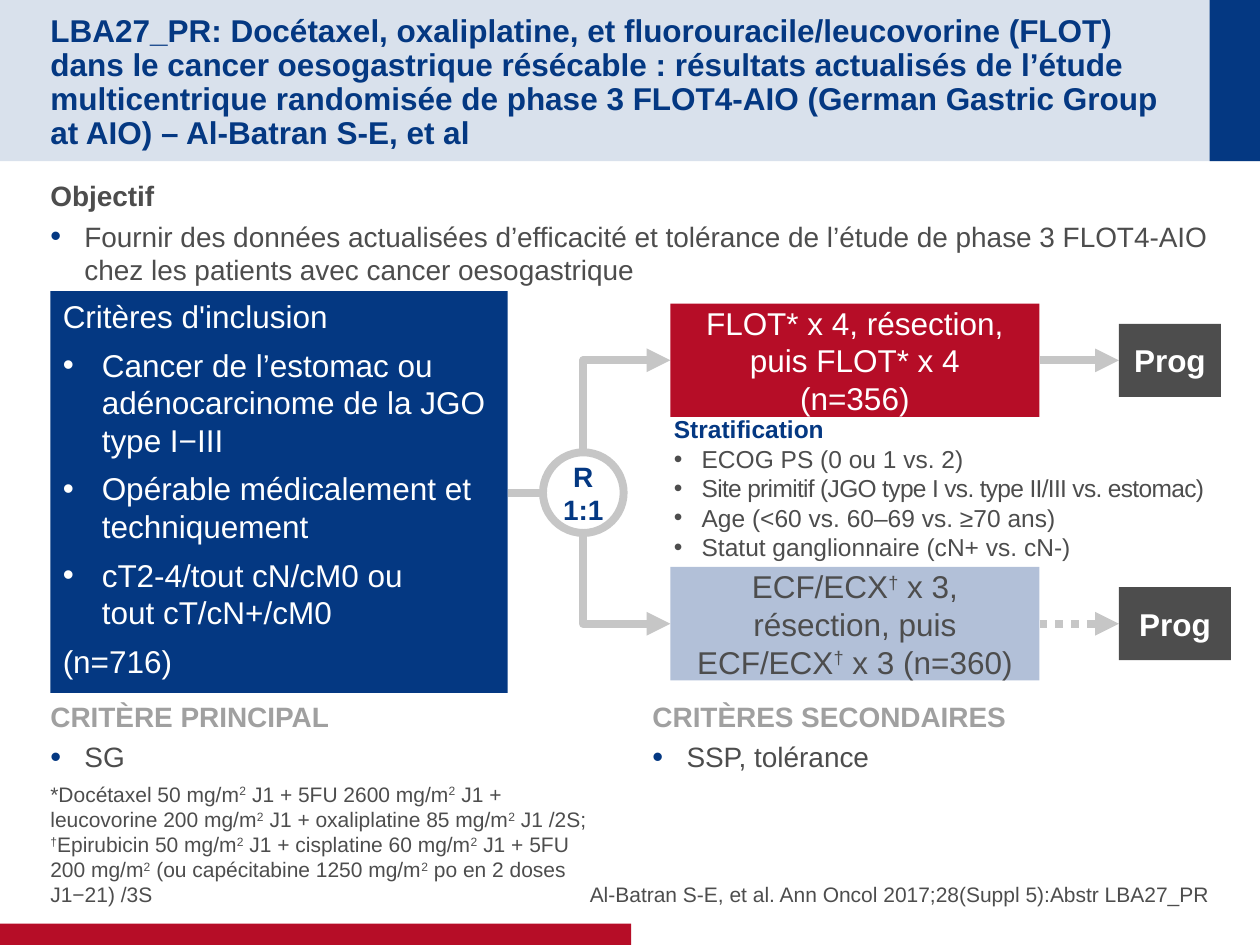
from dataclasses import dataclass

from lxml import etree
from pptx import Presentation
from pptx.dml.color import RGBColor
from pptx.enum.dml import MSO_LINE
from pptx.enum.shapes import MSO_CONNECTOR, MSO_SHAPE
from pptx.enum.text import MSO_ANCHOR, PP_ALIGN
from pptx.oxml.ns import qn
from pptx.util import Inches, Pt

RECT, OVAL = MSO_SHAPE.RECTANGLE, MSO_SHAPE.OVAL
STRAIGHT, ELBOW = MSO_CONNECTOR.STRAIGHT, MSO_CONNECTOR.ELBOW
LEFT, CENTER, RIGHT = PP_ALIGN.LEFT, PP_ALIGN.CENTER, PP_ALIGN.RIGHT
TOP, MIDDLE, BOTTOM = MSO_ANCHOR.TOP, MSO_ANCHOR.MIDDLE, MSO_ANCHOR.BOTTOM
DOTTED = MSO_LINE.ROUND_DOT

COLORS = {
    "navy": "043882", "red": "B60D27", "pale": "B2C0D8", "text": "4D4D4D",
    "heading": "A0A0A0", "arrow": "C6C6C6", "white": "FFFFFF",
}
FONT = "Arial"

# The slide is a grid of 100 columns by 75 rows
COLUMNS, ROWS, CELL = 100, 75, 0.1
MARGIN = 4
R_COLUMN, R_ROW, R_RADIUS = 46.3, 39.1, 3.2
ARM_LEFT, ARM_WIDTH, ARM_HEIGHT = 53.2, 29.3, 9
ARM_RIGHT = ARM_LEFT + ARM_WIDTH
PROG_LEFT, PROG_HEIGHT = 88.8, 5.8
TOP_ARM, BOTTOM_ARM = 28.6, 49.5
CRITERIA_WIDTH = 36.3


@dataclass(frozen=True)
class Area:
    left: float
    top: float
    width: float
    height: float

    def lengths(self) -> tuple:
        return tuple(grid(n) for n in (self.left, self.top, self.width, self.height))


@dataclass(frozen=True)
class Line:
    """One paragraph; text between ^ marks is superscript."""
    text: str
    size: int = 16
    color: str = "text"
    bold: bool = False
    indent: float = 0  # in columns; a positive indent carries a bullet
    bullet_color: str = ""
    after: float = 0
    spacing: float = 1
    tracking: int = 0


def grid(cells: float) -> int:
    return Inches(cells * CELL)


def rgb(name: str) -> RGBColor:
    return RGBColor.from_string(COLORS[name])


def add_bullet(para, line: Line) -> None:
    properties = para._p.get_or_add_pPr()
    properties.set("marL", str(grid(line.indent)))
    properties.set("indent", str(-grid(line.indent)))
    if line.bullet_color:
        color = etree.SubElement(properties, qn("a:buClr"))
        etree.SubElement(color, qn("a:srgbClr"), val=COLORS[line.bullet_color])
        etree.SubElement(properties, qn("a:buSzPct"), val="110000")
    etree.SubElement(properties, qn("a:buFont"), typeface=FONT)
    etree.SubElement(properties, qn("a:buChar"), char="•")


def write(box, lines: list[Line], align=LEFT, anchor=TOP, insets=(0.1, 0.05, 0.1, 0.05), wrap=True) -> None:
    frame = box.text_frame
    frame.word_wrap, frame.vertical_anchor = wrap, anchor
    (frame.margin_left, frame.margin_top,
     frame.margin_right, frame.margin_bottom) = map(Inches, insets)
    for number, line in enumerate(lines):
        para = frame.add_paragraph() if number else frame.paragraphs[0]
        para.alignment, para.line_spacing = align, line.spacing
        para.space_after = Pt(line.after)
        if line.indent:
            add_bullet(para, line)
        for position, part in enumerate(line.text.split("^")):
            for piece_number, piece in enumerate(part.split("\n")):
                if piece_number:
                    para.add_line_break()
                span = para.add_run()
                span.text = piece
                span.font.name, span.font.size = FONT, Pt(line.size)
                span.font.bold, span.font.color.rgb = line.bold, rgb(line.color)
                if position % 2:
                    span._r.get_or_add_rPr().set("baseline", "30000")
                if line.tracking:
                    span._r.get_or_add_rPr().set("spc", str(line.tracking))


def add_text(page, area: Area, lines: list[Line], **layout) -> None:
    write(page.shapes.add_textbox(*area.lengths()), lines, **layout)


def add_block(page, area: Area, fill: str, alpha: int = 100):
    block = page.shapes.add_shape(RECT, *area.lengths())
    block.shadow.inherit = False
    block.fill.solid()
    block.fill.fore_color.rgb = rgb(fill)
    block.line.fill.background()
    if alpha < 100:
        color = block._element.spPr.find(".//" + qn("a:srgbClr"))
        etree.SubElement(color, qn("a:alpha"), val=str(alpha * 1000))
    return block


def add_link(page, start: tuple, end: tuple, kind=STRAIGHT, arrow=True, dash=None):
    link = page.shapes.add_connector(kind, *map(grid, (*start, *end)))
    link.line.color.rgb, link.line.width = rgb("arrow"), Pt(4.5)
    if dash:
        link.line.dash_style = dash
    if arrow:
        etree.SubElement(link.line._get_or_add_ln(), qn("a:tailEnd"), type="triangle")
    etree.SubElement(link._element.spPr, qn("a:effectLst"))
    return link


def add_branch(page, row: float) -> None:
    """One-bend arrow, vertical first, from the circle to an arm."""
    direction = 1 if row > R_ROW else -1
    start_row = R_ROW + direction * R_RADIUS
    middle_column, middle_row = (R_COLUMN + ARM_LEFT) / 2, (start_row + row) / 2
    half_run, half_rise = (ARM_LEFT - R_COLUMN) / 2, abs(row - start_row) / 2
    # Laid out before its quarter turn, so run and rise trade places
    link = add_link(
        page,
        (middle_column + half_rise, middle_row - direction * half_run),
        (middle_column - half_rise, middle_row + direction * half_run),
        ELBOW,
    )
    properties = link._element.spPr
    properties.find(qn("a:prstGeom")).set("prst", "bentConnector2")
    properties.find(qn("a:xfrm")).set("rot", str((270 if direction > 0 else 90) * 60000))


def add_arm(page, row: float, fill: str, lines: list[Line], prog_width: float, dash=None) -> None:
    add_branch(page, row)
    add_link(page, (ARM_RIGHT, row), (PROG_LEFT, row), dash=dash)
    centred = {"align": CENTER, "anchor": MIDDLE, "insets": (0.1, 0, 0.1, 0)}
    arm = add_block(page, Area(ARM_LEFT, row - ARM_HEIGHT / 2, ARM_WIDTH, ARM_HEIGHT), fill)
    write(arm, lines, **centred)
    prog = add_block(page, Area(PROG_LEFT, row - PROG_HEIGHT / 2, prog_width, PROG_HEIGHT), "text")
    write(prog, [Line("Prog", 18, "white", True)], **centred)


def section(heading: str, item: str, color: str = "heading") -> list[Line]:
    return [Line(heading, color=color, bold=True, after=4),
            Line(item, indent=2.7, bullet_color="navy", after=4)]


def main() -> None:
    deck = Presentation()
    deck.slide_width, deck.slide_height = grid(COLUMNS), grid(ROWS)
    page = deck.slides.add_slide(deck.slide_layouts[6])

    # Header band, footer bar and title
    add_block(page, Area(0, 0, COLUMNS, 12.8), "navy", alpha=15)
    add_block(page, Area(96, 0, 4, 12.8), "navy")
    add_block(page, Area(0, 73.3, 50.1, 1.7), "red")
    add_text(page, Area(MARGIN, 2, 90.1, 8.8), [Line(
        "LBA27_PR: Docétaxel, oxaliplatine, et fluorouracile/leucovorine (FLOT) dans le cancer "
        "oesogastrique résécable : résultats actualisés de l’étude multicentrique randomisée de "
        "phase 3 FLOT4-AIO (German Gastric Group at AIO) – Al-Batran S-E, et al",
        18, "navy", True, spacing=0.9)], anchor=MIDDLE, insets=(0, 0.05, 0, 0))

    # Objective
    flush = (0, 0.05, 0, 0.05)
    add_text(page, Area(MARGIN, 13.7, 92, 9.4), section(
        "Objectif", "Fournir des données actualisées d’efficacité et tolérance de l’étude de "
        "phase 3 FLOT4-AIO chez les patients avec cancer oesogastrique", "text"), insets=flush)

    # Inclusion criteria
    criteria = add_block(page, Area(MARGIN, 23.1, CRITERIA_WIDTH, 31.9), "navy")
    items = [("Critères d'inclusion", 0),
             ("Cancer de l’estomac ou adénocarcinome de la JGO type I−III", 3.1),
             ("Opérable médicalement et techniquement", 3.1),
             ("cT2-4/tout cN/cM0 ou\ntout cT/cN+/cM0", 3.1),
             ("(n=716)", 0)]
    write(criteria, [Line(text, 18, "white", indent=indent, after=6) for text, indent in items])

    # Randomisation and treatment arms
    add_link(page, (MARGIN + CRITERIA_WIDTH, R_ROW), (R_COLUMN - R_RADIUS, R_ROW), arrow=False)
    add_arm(page, TOP_ARM, "red", [Line("FLOT* x 4, résection, puis FLOT* x 4", 18, "white"),
                                   Line("(n=356)", 18, "white")], 8.1)
    add_arm(page, BOTTOM_ARM, "pale", [
        Line("ECF/ECX^†^ x 3, résection, puis ECF/ECX^†^ x 3 (n=360)", 18)], 8.9, DOTTED)
    circle = page.shapes.add_shape(OVAL, *Area(
        R_COLUMN - R_RADIUS, R_ROW - R_RADIUS, 2 * R_RADIUS, 2 * R_RADIUS).lengths())
    circle.shadow.inherit = False
    circle.fill.background()
    circle.line.color.rgb, circle.line.width = rgb("arrow"), Pt(4.5)
    write(circle, [Line(text, color="navy", bold=True) for text in ("R", "1:1")],
          align=CENTER, anchor=MIDDLE, wrap=False)

    # Stratification factors
    factors = [("ECOG PS (0 ou 1 vs. 2)", 0),
               ("Site primitif (JGO type I vs. type II/III vs. estomac)", -40),
               ("Age (<60 vs. 60–69 vs. ≥70 ans)", 0),
               ("Statut ganglionnaire (cN+ vs. cN-)", 0)]
    add_text(page, Area(52.5, 32.4, 47.5, 9.3), [Line("Stratification", 14, "navy", True)] + [
        Line(text, 14, indent=2.2, tracking=tracking) for text, tracking in factors])

    # Endpoints
    add_text(page, Area(MARGIN, 55, 45.2, 7.1), section("CRITÈRE PRINCIPAL", "SG"), insets=flush)
    add_text(page, Area(50.8, 55, 45.2, 8.7), section("CRITÈRES SECONDAIRES", "SSP, tolérance"))

    # Footnote and reference
    footer = {"anchor": BOTTOM, "insets": (0, 0, 0, 0)}
    add_text(page, Area(MARGIN, 66.7, 43.4, 5.3), [Line(
        "*Docétaxel 50 mg/m^2^ J1 + 5FU 2600 mg/m^2^ J1 + leucovorine 200 mg/m^2^ J1 + "
        "oxaliplatine 85 mg/m^2^ J1 /2S; ^†^Epirubicin 50 mg/m^2^ J1 + cisplatine 60 mg/m^2^ J1 + "
        "5FU 200 mg/m^2^ (ou capécitabine 1250 mg/m^2^ po en 2 doses J1−21) /3S", 12)], **footer)
    add_text(page, Area(45.4, 66.7, 50.6, 5.3), [Line(
        "Al-Batran S-E, et al. Ann Oncol 2017;28(Suppl 5):Abstr LBA27_PR", 12)],
        align=RIGHT, **footer)

    deck.save("out.pptx")


if __name__ == "__main__":
    main()
